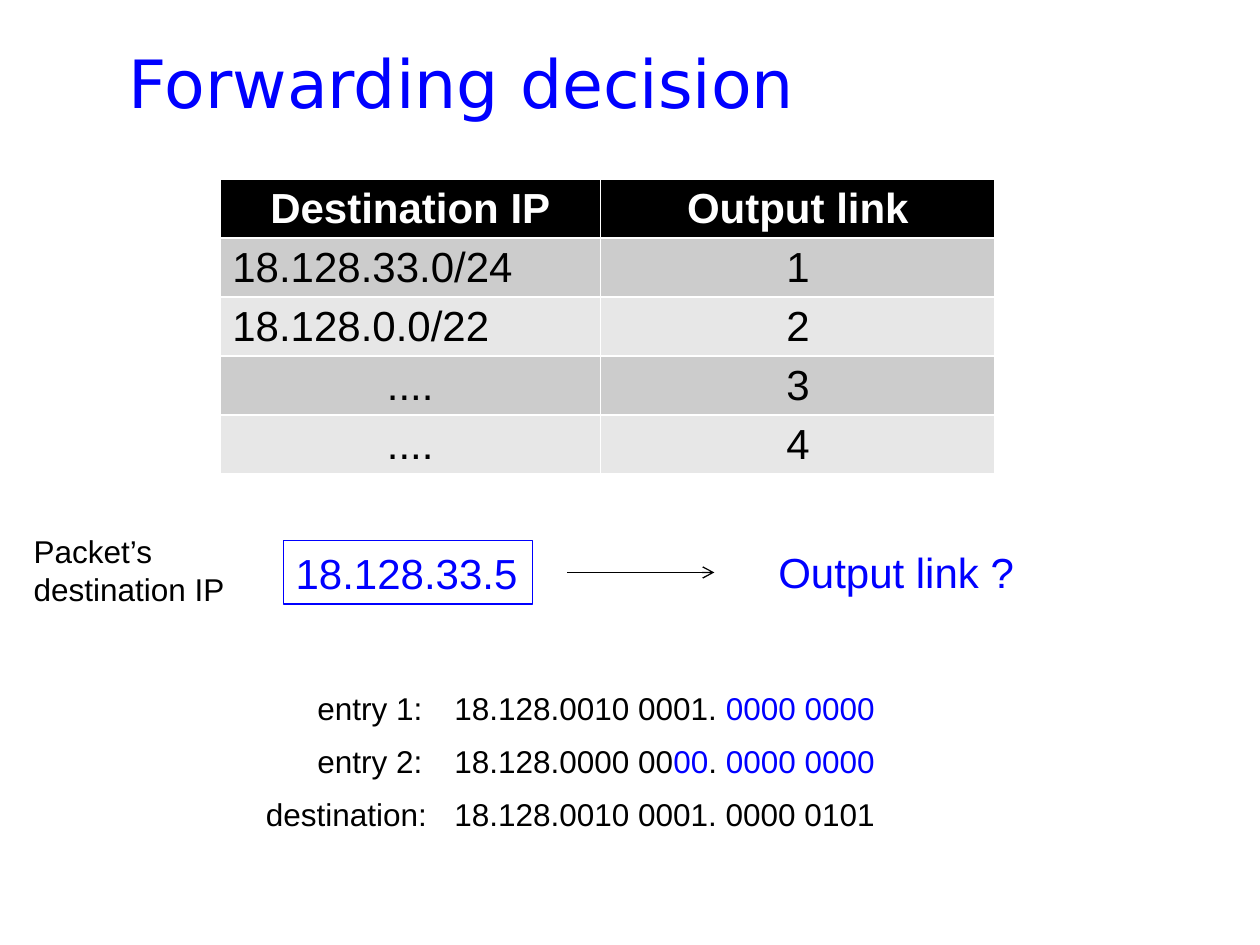
from lxml.etree import SubElement
from pptx import Presentation
from pptx.dml.color import RGBColor
from pptx.enum.shapes import MSO_CONNECTOR, MSO_SHAPE
from pptx.enum.text import MSO_ANCHOR, PP_ALIGN
from pptx.oxml.ns import qn
from pptx.util import Cm, Pt

BLUE = RGBColor(0x00, 0x00, 0xFF)
BLACK = RGBColor(0x00, 0x00, 0x00)
WHITE = RGBColor(0xFF, 0xFF, 0xFF)
DARK_BAND = RGBColor(0xCC, 0xCC, 0xCC)
LIGHT_BAND = RGBColor(0xE7, 0xE7, 0xE7)

ROUTES = [
    ("Destination IP", "Output link"),
    ("18.128.33.0/24", "1"),
    ("18.128.0.0/22", "2"),
    ("....", "3"),
    ("....", "4"),
]
# label, label offset, label width, runs of the address
ADDRESSES = [
    ("entry 1:", 1.04, 2.64,
     [("18.128.0010 0001. ", BLACK), ("0000 0000", BLUE)]),
    ("entry 2:", 1.04, 2.64,
     [("18.128.0000 00", BLACK), ("00", BLUE), (". ", BLACK), ("0000 0000", BLUE)]),
    ("destination:", 0, 3.78,
     [("18.128.0010 0001. 0000 0101", BLACK)]),
]


def add_run(paragraph, text, size, color, font="Arial", bold=False):
    run = paragraph.add_run()
    run.text = text
    run.font.name = font
    run.font.size = Pt(size)
    run.font.bold = bold
    run.font.color.rgb = color


def add_label(slide, left, top, width, height, lines, size):
    """Place a text box; each line is a list of (text, colour) runs."""
    label = slide.shapes.add_textbox(Cm(left), Cm(top), Cm(width), Cm(height))
    frame = label.text_frame
    frame.word_wrap = False
    for index, runs in enumerate(lines):
        paragraph = frame.add_paragraph() if index else frame.paragraphs[0]
        for text, color in runs:
            add_run(paragraph, text, size, color)


def set_title(slide, left, top, width, height):
    title = slide.shapes.title
    title.left, title.top = Cm(left), Cm(top)
    title.width, title.height = Cm(width), Cm(height)
    frame = title.text_frame
    frame.vertical_anchor = MSO_ANCHOR.TOP
    frame.margin_top = Cm(0.2)
    paragraph = frame.paragraphs[0]
    paragraph.alignment = PP_ALIGN.LEFT
    add_run(paragraph, "Forwarding decision", 38, BLUE, font="DejaVu Sans")


def add_forwarding_table(slide, left, top, width, height):
    table = slide.shapes.add_table(
        len(ROUTES), 2, Cm(left), Cm(top), Cm(width), Cm(height)).table
    address_width = 7.68
    table.columns[0].width = Cm(address_width)
    table.columns[1].width = Cm(width - address_width)
    for row, values in enumerate(ROUTES):
        header = row == 0
        fill = BLACK if header else DARK_BAND if row % 2 else LIGHT_BAND
        for column, value in enumerate(values):
            cell = table.cell(row, column)
            cell.fill.solid()
            cell.fill.fore_color.rgb = fill
            cell.margin_top = cell.margin_bottom = Cm(0.1)
            cell.vertical_anchor = MSO_ANCHOR.MIDDLE
            paragraph = cell.text_frame.paragraphs[0]
            is_address = "/" in value
            paragraph.alignment = PP_ALIGN.LEFT if is_address else PP_ALIGN.CENTER
            add_run(paragraph, value, 24, WHITE if header else BLACK, bold=header)


def add_arrow(slide, left, top, length):
    arrow = slide.shapes.add_connector(
        MSO_CONNECTOR.STRAIGHT, Cm(left), Cm(top), Cm(left + length), Cm(top))
    arrow.line.color.rgb = BLACK
    arrow.line.width = Pt(0.75)
    SubElement(arrow.line._get_or_add_ln(), qn("a:tailEnd"), type="arrow")
    SubElement(arrow._element.spPr, qn("a:effectLst"))


def add_lookup(slide, left, top, height):
    """Packet address, arrow and the open question, in one row."""
    add_label(slide, left, top, 4.39, height,
              [[("Packet’s", BLACK)], [("destination IP", BLACK)]], 18)

    field_height = 1.28
    field_top = top + 0.3
    packet_field = slide.shapes.add_shape(
        MSO_SHAPE.RECTANGLE, Cm(left + 5.28), Cm(field_top), Cm(5.03), Cm(field_height))
    packet_field.shadow.inherit = False
    packet_field.fill.background()
    packet_field.line.color.rgb = BLUE
    packet_field.line.width = Pt(0.75)
    packet_field.text_frame.word_wrap = False
    paragraph = packet_field.text_frame.paragraphs[0]
    paragraph.alignment = PP_ALIGN.LEFT
    add_run(paragraph, "18.128.33.5", 24, BLUE)

    add_arrow(slide, left + 11, field_top + field_height / 2, 2.97)
    add_label(slide, left + 15.01, field_top, 5.31, field_height,
              [[("Output link ?", BLUE)]], 24)


def add_address_comparison(slide, left, top, row_step):
    for row, (name, offset, width, runs) in enumerate(ADDRESSES):
        row_top = top + row * row_step
        add_label(slide, left + offset, row_top, width, 1.02, [[(name, BLACK)]], 18)
        add_label(slide, left + 3.8, row_top, 9.07, 1.02, [runs], 18)


def main():
    presentation = Presentation()
    presentation.slide_width, presentation.slide_height = Cm(25.4), Cm(19.05)
    slide = presentation.slides.add_slide(presentation.slide_layouts[5])
    set_title(slide, 2.34, 0.64, 22.43, 2.34)
    add_forwarding_table(slide, 4.43, 3.61, 15.63, 5.95)
    add_lookup(slide, 0.43, 10.6, 1.8)
    add_address_comparison(slide, 5.11, 13.77, 1.07)
    presentation.save("out.pptx")


if __name__ == "__main__":
    main()
